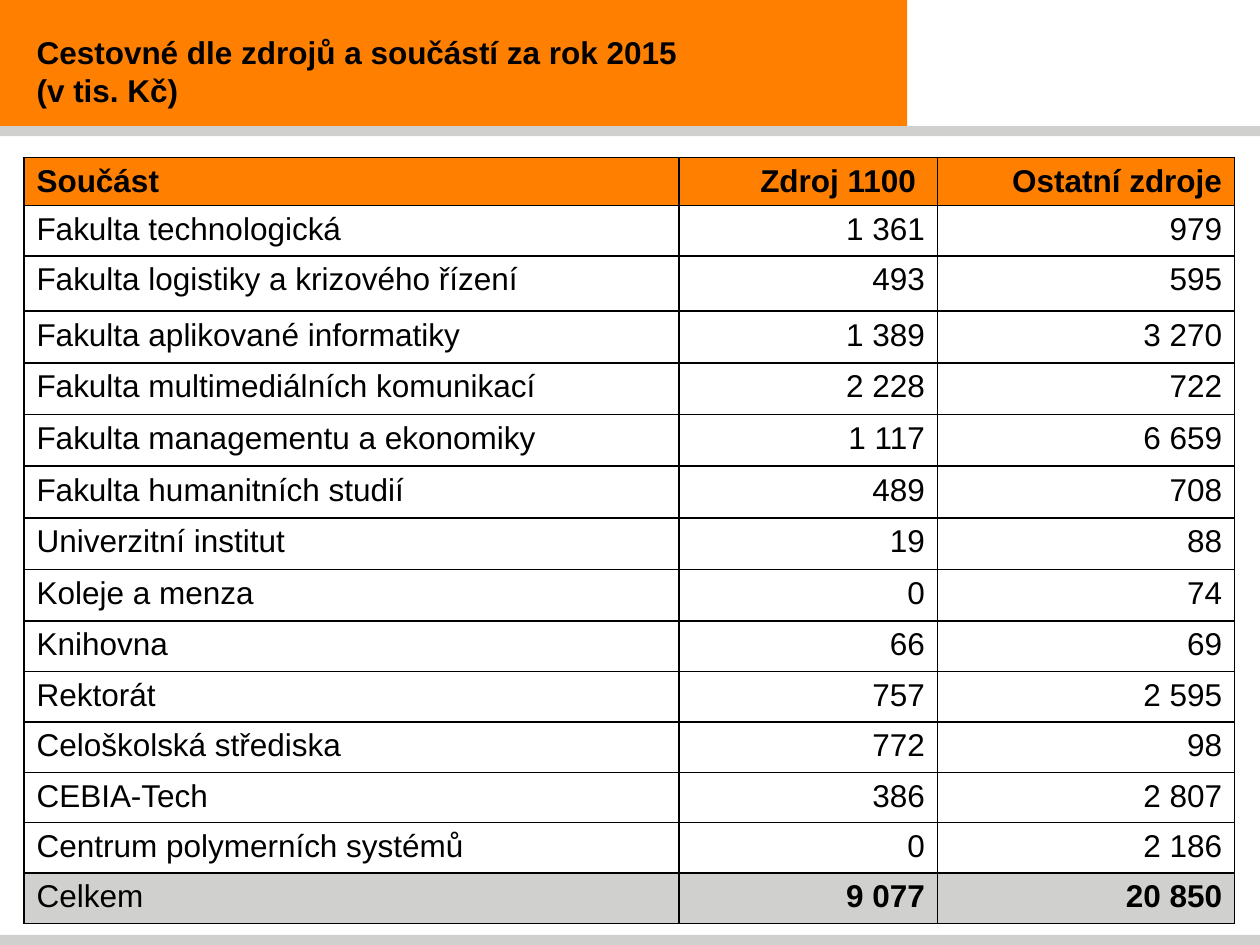
"""Build a slide with a table of travel costs by source and university unit."""
from lxml.etree import SubElement
from pptx import Presentation
from pptx.dml.color import RGBColor
from pptx.enum.shapes import MSO_SHAPE
from pptx.enum.text import MSO_ANCHOR, MSO_AUTO_SIZE, PP_ALIGN
from pptx.oxml.ns import qn
from pptx.util import Inches, Pt

ORANGE = RGBColor(0xFF, 0x80, 0x01)
GRAY = RGBColor(0xD0, 0xD0, 0xCE)
BLACK = RGBColor(0, 0, 0)
WIDTH, HEIGHT = 10, 7.5
TITLE = "Cestovné dle zdrojů a součástí za rok 2015\v(v tis. Kč)"
COLUMN_WIDTHS = [5.2, 2.05, 2.36]
ROW_HEIGHTS = [0.38, 0.4, 0.44] + [0.41] * 6 + [0.4] * 6
COSTS = [
    ("Součást", "Zdroj 1100 ", "Ostatní zdroje"),
    ("Fakulta technologická", "1 361", "979"),
    ("Fakulta logistiky a krizového řízení", "493", "595"),
    ("Fakulta aplikované informatiky", "1 389", "3 270"),
    ("Fakulta multimediálních komunikací", "2 228", "722"),
    ("Fakulta managementu a ekonomiky", "1 117", "6 659"),
    ("Fakulta humanitních studií", "489", "708"),
    ("Univerzitní institut", "19", "88"),
    ("Koleje a menza", "0", "74"),
    ("Knihovna", "66", "69"),
    ("Rektorát", "757", "2 595"),
    ("Celoškolská střediska", "772", "98"),
    ("CEBIA-Tech", "386", "2 807"),
    ("Centrum polymerních systémů", "0", "2 186"),
    ("Celkem", "9 077", "20 850"),
]


class Page:
    """Hold the text style and the current slide."""

    def __init__(self, deck):
        self.page = deck.slides.add_slide(deck.slide_layouts[5])
        self.style = {"name": "Arial", "size": Pt(18)}

    def place(self, box, left, top, width, height):
        """Place a box by shares of the slide's size."""
        frame = {"left": left * WIDTH, "top": top * HEIGHT,
                 "width": width * WIDTH, "height": height * HEIGHT}
        for name, value in frame.items():
            setattr(box, name, Inches(value))

    def format_text(self, para, bold, align, margin, indent):
        """Format every run of a paragraph."""
        para.alignment = align
        properties = para._p.get_or_add_pPr()
        properties.set("marL", str(Inches(margin)))
        properties.set("indent", str(Inches(indent)))
        for span in para.runs:
            for name, value in {**self.style, "bold": bold}.items():
                setattr(span.font, name, value)
            span.font.color.rgb = BLACK
        for line_break in para._p.findall(qn("a:br")):
            SubElement(line_break, qn("a:rPr"), sz="1800")

    def band(self, color, *shares):
        """Draw a plain filled band."""
        box = self.page.shapes.add_shape(MSO_SHAPE.RECTANGLE, 0, 0, 0, 0)
        self.place(box, *shares)
        box.shadow.inherit = False
        box.fill.solid()
        box.fill.fore_color.rgb = color
        box.line.fill.background()

    def title(self, text, *shares):
        """Put the title in front of the bands."""
        box = self.page.shapes.title
        self.page.shapes._spTree.append(box._element)
        self.place(box, *shares)
        frame = box.text_frame
        frame.text = text
        settings = {"word_wrap": True, "auto_size": MSO_AUTO_SIZE.NONE,
                    "vertical_anchor": MSO_ANCHOR.MIDDLE}
        for name, value in settings.items():
            setattr(frame, name, value)
        self.format_text(frame.paragraphs[0], True, PP_ALIGN.LEFT, 0.19, 0)

    def border(self, cell):
        """Draw thin black lines on all four sides of a cell."""
        properties = cell._tc.get_or_add_tcPr()
        for position, side in enumerate(("lnL", "lnR", "lnT", "lnB")):
            line = SubElement(properties, qn(f"a:{side}"), w=str(Pt(1)))
            fill = SubElement(line, qn("a:solidFill"))
            SubElement(fill, qn("a:srgbClr"), val=str(BLACK))
            properties.insert(position, line)

    def table(self, rows, left, top):
        """Add the cost table with its header and total rows."""
        box = self.page.shapes.add_table(
            len(rows), len(COLUMN_WIDTHS), Inches(left * WIDTH), Inches(top * HEIGHT),
            Inches(sum(COLUMN_WIDTHS)), Inches(sum(ROW_HEIGHTS)))
        table = box.table
        table.horz_banding = False
        for column, width in zip(table.columns, COLUMN_WIDTHS):
            column.width = Inches(width)
        last = len(rows) - 1
        fills = {0: ORANGE, last: GRAY}
        for i, row in enumerate(rows):
            table.rows[i].height = Inches(ROW_HEIGHTS[i])
            for j, text in enumerate(row):
                cell = table.cell(i, j)
                cell.text = text
                if i in fills:
                    cell.fill.solid()
                    cell.fill.fore_color.rgb = fills[i]
                else:
                    cell.fill.background()
                self.border(cell)
                bold = i == 0 or (i == last and j > 0)
                align = PP_ALIGN.RIGHT if j else PP_ALIGN.LEFT
                self.format_text(cell.text_frame.paragraphs[0], bold, align, 0.38, -0.38)


def main():
    """Build and save the deck."""
    deck = Presentation()
    deck.slide_width, deck.slide_height = Inches(WIDTH), Inches(HEIGHT)
    page = Page(deck)
    stripe = 0.08 / HEIGHT
    page.band(ORANGE, 0, 0, 0.72, 1 / HEIGHT)
    for top in (1 - stripe, 1 / HEIGHT):
        page.band(GRAY, 0, top, 1, stripe)
    page.title(TITLE, 0, 0.1 / HEIGHT, 0.72, 0.92 / HEIGHT)
    page.table(COSTS, 0.19 / WIDTH, 1.25 / HEIGHT)
    deck.save("out.pptx")


if __name__ == "__main__":
    main()
